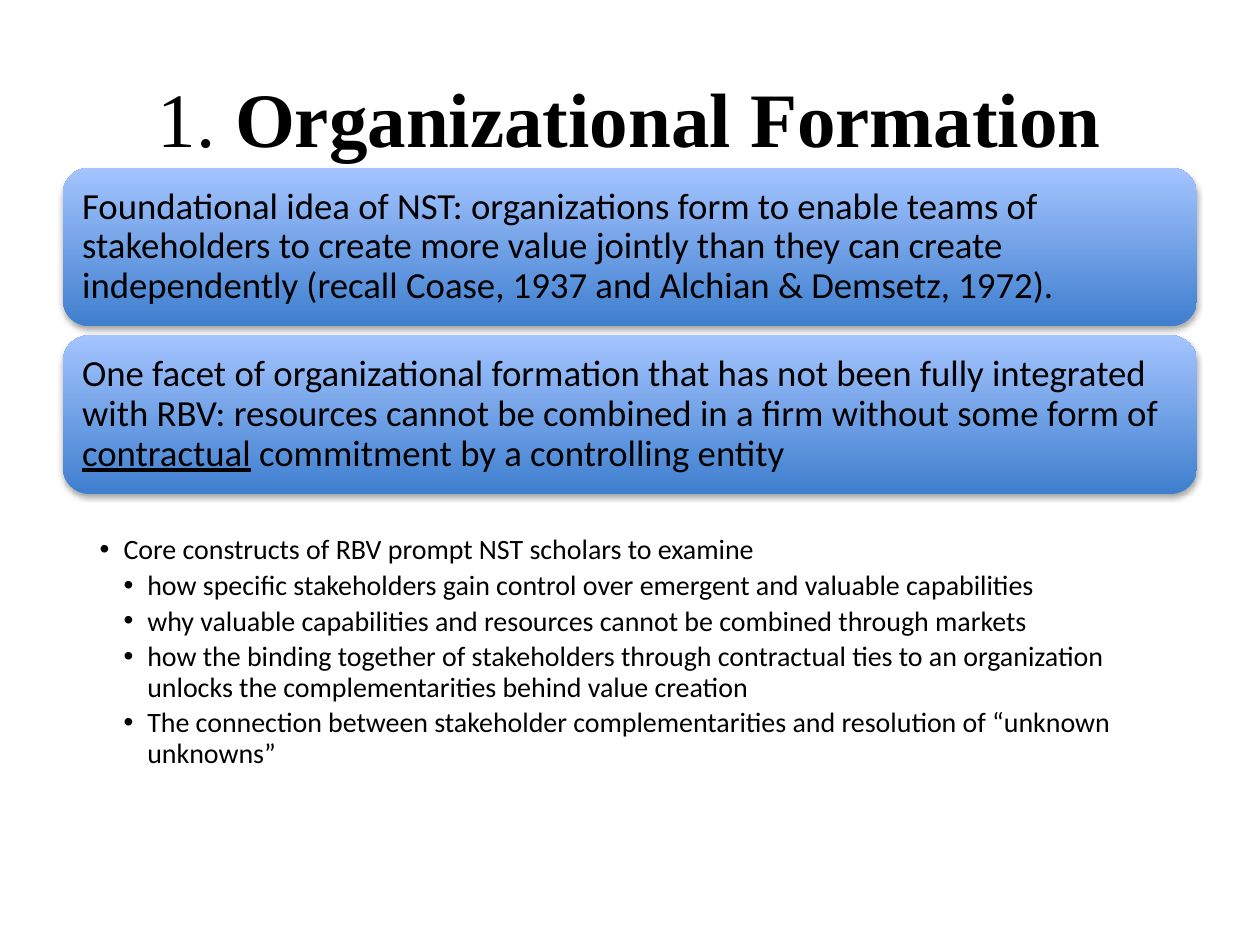
from lxml.etree import SubElement
from pptx import Presentation
from pptx.dml.color import RGBColor
from pptx.enum.shapes import MSO_SHAPE
from pptx.enum.text import MSO_ANCHOR, MSO_AUTO_SIZE, PP_ALIGN
from pptx.oxml.ns import qn
from pptx.util import Cm, Pt

BLACK = RGBColor(0x00, 0x00, 0x00)
DEEP = RGBColor(0x3F, 0x7F, 0xCE)
PALE = RGBColor(0xA4, 0xC4, 0xFF)

CARDS = [
    [("Foundational idea of NST: organizations form to enable teams of "
      "stakeholders to create more value jointly than they can create "
      "independently (recall Coase, 1937 and Alchian & Demsetz, 1972).", {})],
    [("One facet of organizational formation that has not been fully integrated "
      "with RBV: resources cannot be combined in a firm without some form of ", {}),
     ("contractual", {"line": True}),
     (" commitment by a controlling entity", {})],
]
POINTS = [
    (0, "Core constructs of RBV prompt NST scholars to examine"),
    (1, "how specific stakeholders gain control over emergent and valuable capabilities"),
    (1, "why valuable capabilities and resources cannot be combined through markets"),
    (1, "how the binding together of stakeholders through contractual ties to an "
        "organization unlocks the complementarities behind value creation"),
    (1, "The connection between stakeholder complementarities and resolution of "
        "“unknown unknowns”"),
]


def write(para, text, size=16, face="Calibri", bold=False, line=False):
    run = para.add_run()
    run.text = text
    font = run.font
    font.size, font.name = Pt(size), face
    font.bold, font.underline = bold, line
    font.color.rgb = BLACK


def place(shape, box):
    shape.left, shape.top, shape.width, shape.height = box


def inset(frame, left, top, right, bottom):
    frame.margin_left, frame.margin_top = Cm(left), Cm(top)
    frame.margin_right, frame.margin_bottom = Cm(right), Cm(bottom)
    frame.word_wrap = True
    frame.auto_size = MSO_AUTO_SIZE.NONE


def shade(shape):
    shape.shadow.inherit = False
    effects = shape._element.spPr.find(qn("a:effectLst"))
    outer = SubElement(effects, qn("a:outerShdw"), blurRad="40000", dist="23000",
                       dir="5400000", rotWithShape="0")
    color = SubElement(outer, qn("a:srgbClr"), val="000000")
    SubElement(color, qn("a:alpha"), val="35000")


def head(slide, box):
    title = slide.shapes.title
    place(title, box)
    frame = title.text_frame
    frame.vertical_anchor = MSO_ANCHOR.MIDDLE
    frame.auto_size = MSO_AUTO_SIZE.NONE
    para = frame.paragraphs[0]
    para.alignment = PP_ALIGN.CENTER
    write(para, "1. ", size=44, face="Times New Roman")
    write(para, "Organizational Formation", size=44, face="Times New Roman", bold=True)


def card(slide, box, parts):
    shape = slide.shapes.add_shape(MSO_SHAPE.ROUNDED_RECTANGLE, *box)
    shape.fill.gradient()
    shape.fill.gradient_angle = 90
    for stop, color, spot in zip(shape.fill.gradient_stops, (DEEP, PALE), (0, 1)):
        stop.color.rgb, stop.position = color, spot
    shape.line.fill.background()
    shade(shape)
    frame = shape.text_frame
    inset(frame, 0.23, 0.23, 0.23, 0.23)
    frame.vertical_anchor = MSO_ANCHOR.MIDDLE
    para = frame.paragraphs[0]
    para.alignment = PP_ALIGN.LEFT
    para.line_spacing = 0.9
    for text, style in parts:
        write(para, text, size=21, **style)


def stack(slide, box, cards, gap):
    left, top, width, height = box
    tall = (height - gap * (len(cards) - 1)) // len(cards)
    for row, parts in enumerate(cards):
        card(slide, (left, top + row * (tall + gap), width, tall), parts)


def points(slide, box, items):
    body = slide.placeholders[1]
    place(body, box)
    frame = body.text_frame
    inset(frame, 0.74, 0.81, 0.41, 0.08)
    frame.vertical_anchor = MSO_ANCHOR.TOP
    step = Cm(0.48)
    for row, (level, text) in enumerate(items):
        para = frame.add_paragraph() if row else frame.paragraphs[0]
        para.level = level
        para.line_spacing = 0.9
        para.space_before, para.space_after = Pt(0), Pt(3.2)
        props = para._p.get_or_add_pPr()
        props.set("marL", str(step * (level + 1)))
        props.set("indent", str(-step))
        SubElement(props, qn("a:buFont"), typeface="Arial")
        SubElement(props, qn("a:buChar"), char="•")
        write(para, text)


def main():
    deck = Presentation()
    deck.slide_width, deck.slide_height = Cm(25.4), Cm(19.05)
    slide = deck.slides.add_slide(deck.slide_layouts[1])
    left, width = Cm(1.27), Cm(22.86)
    head(slide, (left, Cm(0.76), width, Cm(3.18)))
    stack(slide, (left, Cm(3.38), width, Cm(6.58)), CARDS, Cm(0.18))
    points(slide, (left, Cm(9.98), width, Cm(5.92)), POINTS)
    deck.save("out.pptx")


if __name__ == "__main__":
    main()
